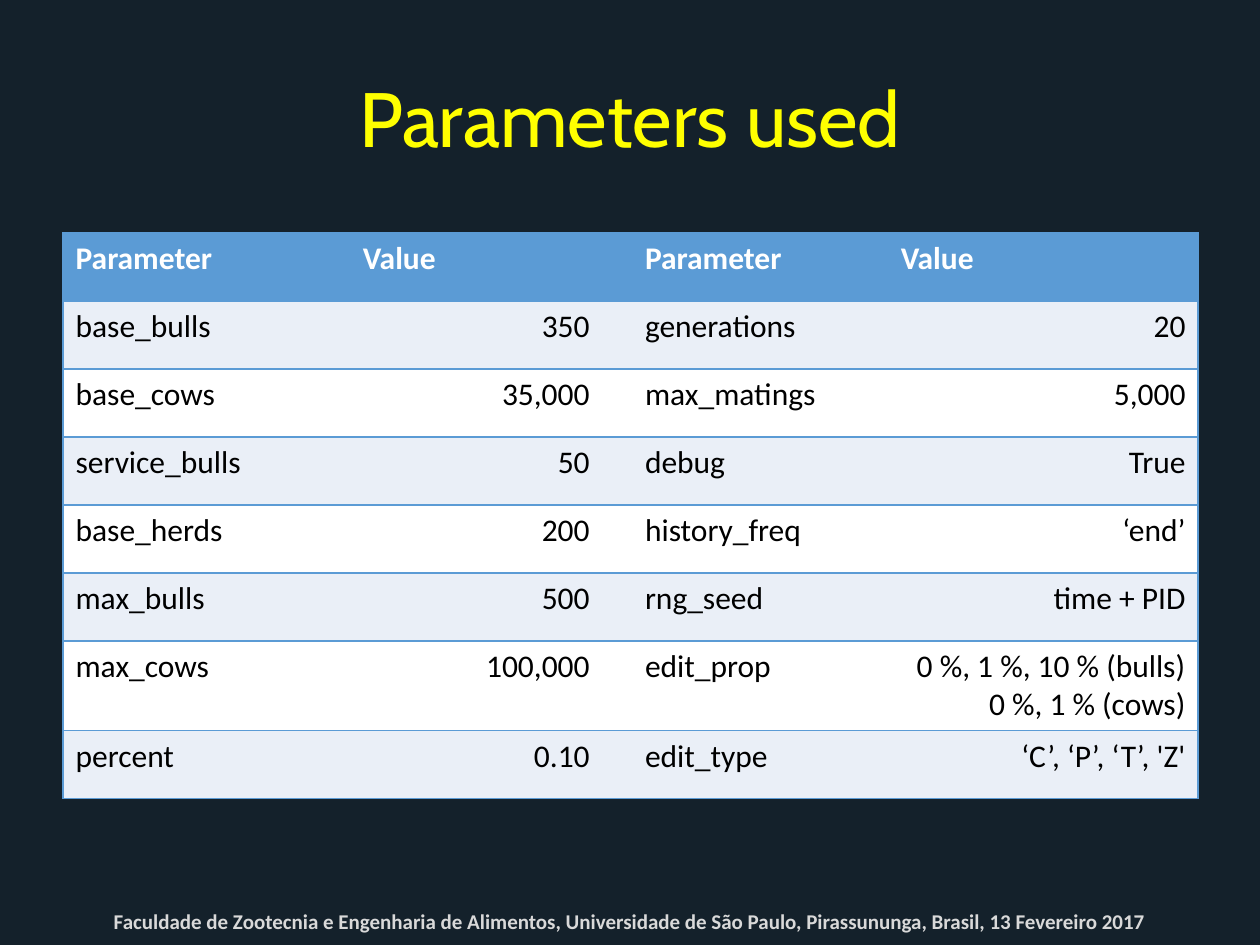
from dataclasses import dataclass

from lxml.etree import SubElement
from pptx import Presentation
from pptx.dml.color import RGBColor
from pptx.enum.text import MSO_ANCHOR, PP_ALIGN
from pptx.oxml.ns import qn
from pptx.util import Inches, Pt


@dataclass(frozen=True)
class Theme:
    """Colours, fonts and type sizes of the slide."""
    background: str = "14212B"
    title: str = "FFFF00"
    accent: str = "5B9BD5"
    band: str = "EAEFF7"
    plain: str = "FFFFFF"
    ink: str = "000000"
    footer: str = "D9D9D9"
    title_font: str = "Cabin"
    body_font: str = "Calibri"
    title_size: int = 44
    table_size: int = 18
    footer_size: int = 12
    border_width: int = 1


THEME = Theme()
MARGIN, CONTENT_WIDTH = 0.5, 9
COLUMN_WIDTHS = (2.28, 2, 0.23, 2.03, 2.46)
ROW_HEIGHT = 0.54
VALUE_COLUMNS = (1, 4)
PARAMETERS = (
    ("Parameter", "Value", "", "Parameter", "Value"),
    ("base_bulls", "350", "", "generations", "20"),
    ("base_cows", "35,000", "", "max_matings", "5,000"),
    ("service_bulls", "50", "", "debug", "True"),
    ("base_herds", "200", "", "history_freq", "‘end’"),
    ("max_bulls", "500", "", "rng_seed", "time + PID"),
    ("max_cows", "100,000", "", "edit_prop", "0 %, 1 %, 10 % (bulls)\n0 %, 1 % (cows)"),
    ("percent", "0.10", "", "edit_type", "‘C’, ‘P’, ‘T’, 'Z'"),
)
FOOTER = ("Faculdade de Zootecnia e Engenharia de Alimentos, Universidade de São Paulo, "
          "Pirassununga, Brasil, 13 Fevereiro 2017")


def write(paragraph, text, font, size, color, bold=False, align=PP_ALIGN.LEFT):
    """Add text to a paragraph, one run for each line."""
    paragraph.alignment = align
    for number, line in enumerate(text.split("\n")):
        if number:
            paragraph.add_line_break()
        run = paragraph.add_run()
        run.text = line
        run.font.name = font
        run.font.size = Pt(size)
        run.font.bold = bold
        run.font.color.rgb = RGBColor.from_string(color)


def draw_borders(cell, is_first, is_last):
    """Rule a cell above and below, and at the outer sides of the table."""
    properties = cell._tc.get_or_add_tcPr()
    edges = {"a:lnL": is_first, "a:lnR": is_last, "a:lnT": True, "a:lnB": True}
    for tag, visible in edges.items():
        edge = SubElement(properties, qn(tag), w=str(Pt(THEME.border_width)))
        if visible:
            fill = SubElement(edge, qn("a:solidFill"))
            SubElement(fill, qn("a:srgbClr"), val=THEME.accent)
        else:
            SubElement(edge, qn("a:noFill"))


def style_cell(cell, row, column, text):
    """Give a cell its borders, fill and text."""
    is_header = row == 0
    draw_borders(cell, column == 0, column == len(COLUMN_WIDTHS) - 1)
    cell.fill.solid()
    body_fill = THEME.band if row % 2 else THEME.plain
    cell.fill.fore_color.rgb = RGBColor.from_string(THEME.accent if is_header else body_fill)
    is_value = column in VALUE_COLUMNS and not is_header
    if text:
        write(cell.text_frame.paragraphs[0], text, THEME.body_font, THEME.table_size,
              THEME.plain if is_header else THEME.ink, is_header,
              PP_ALIGN.RIGHT if is_value else PP_ALIGN.LEFT)


def add_title(slide, text):
    """Place and fill the title placeholder."""
    title = slide.shapes.title
    title.left, title.top = Inches(MARGIN), Inches(0.3)
    title.width, title.height = Inches(CONTENT_WIDTH), Inches(1.25)
    title.text_frame.vertical_anchor = MSO_ANCHOR.MIDDLE
    write(title.text_frame.paragraphs[0], text, THEME.title_font, THEME.title_size,
          THEME.title, align=PP_ALIGN.CENTER)


def add_parameter_table(slide):
    """Add the table of parameters and values."""
    table = slide.shapes.add_table(
        len(PARAMETERS), len(COLUMN_WIDTHS), Inches(MARGIN), Inches(1.85),
        Inches(CONTENT_WIDTH), Inches(ROW_HEIGHT * len(PARAMETERS))).table
    table.first_row = table.horz_banding = False
    for column, width in zip(table.columns, COLUMN_WIDTHS):
        column.width = Inches(width)
    for row, texts in enumerate(PARAMETERS):
        for column, text in enumerate(texts):
            style_cell(table.cell(row, column), row, column, text)


def add_footer(slide, text):
    """Add the centred line at the foot of the slide."""
    footer = slide.shapes.add_textbox(
        Inches(MARGIN), Inches(7.06), Inches(CONTENT_WIDTH), Inches(0.4)).text_frame
    footer.word_wrap = True
    footer.vertical_anchor = MSO_ANCHOR.BOTTOM
    write(footer.paragraphs[0], text, THEME.body_font, THEME.footer_size,
          THEME.footer, True, PP_ALIGN.CENTER)


def main():
    """Build and save the slide."""
    deck = Presentation()
    deck.slide_width, deck.slide_height = Inches(10), Inches(7.5)
    slide = deck.slides.add_slide(deck.slide_layouts.get_by_name("Title Only"))
    slide.background.fill.solid()
    slide.background.fill.fore_color.rgb = RGBColor.from_string(THEME.background)
    add_title(slide, "Parameters used")
    add_parameter_table(slide)
    add_footer(slide, FOOTER)
    deck.save("out.pptx")


if __name__ == "__main__":
    main()
